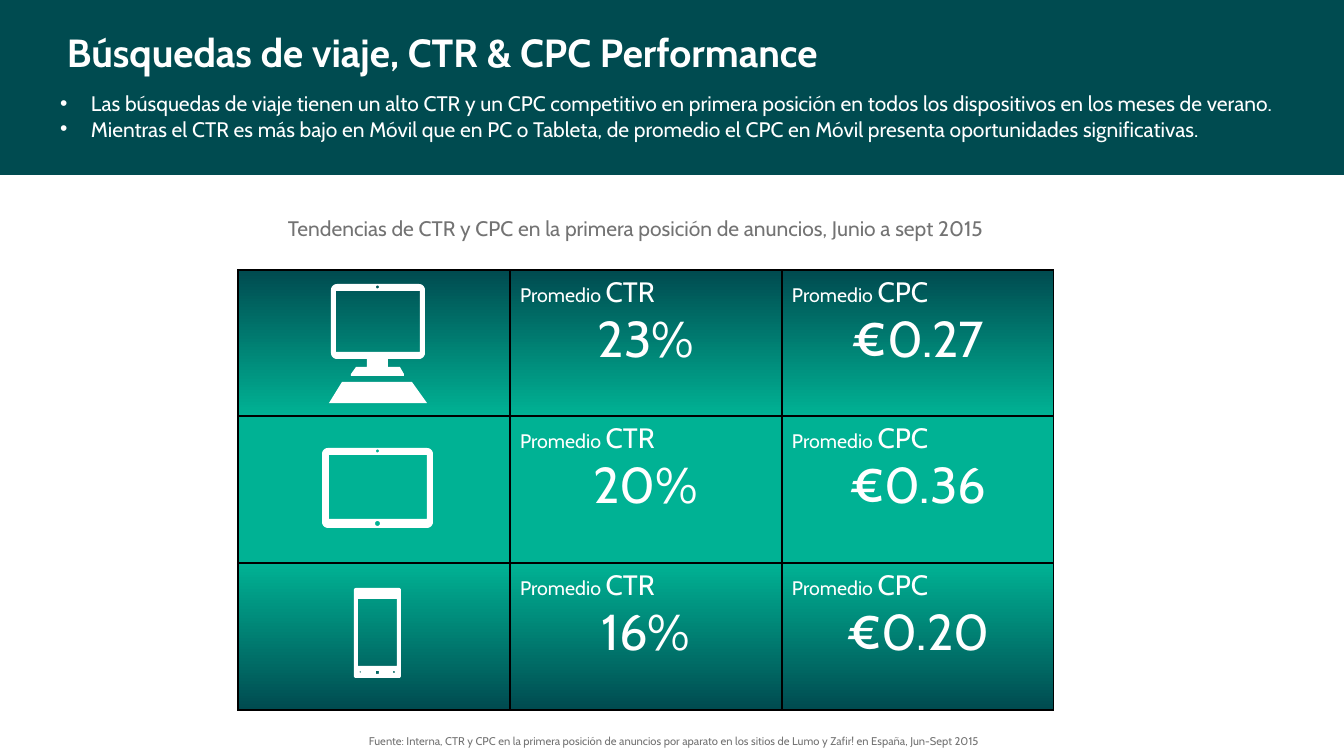
from dataclasses import dataclass
from math import cos, radians, sin

from lxml.etree import SubElement
from pptx import Presentation
from pptx.dml.color import RGBColor
from pptx.enum.shapes import MSO_SHAPE
from pptx.enum.text import MSO_ANCHOR, MSO_AUTO_SIZE, PP_ALIGN
from pptx.oxml.ns import qn
from pptx.util import Emu, Pt

PX = 914400 / 100.8


@dataclass(frozen=True)
class Theme:
    font: str = "Cabin"
    dark: RGBColor = RGBColor(0x00, 0x4B, 0x50)
    green: RGBColor = RGBColor(0x00, 0xB2, 0x94)
    white: RGBColor = RGBColor(0xFF, 0xFF, 0xFF)
    grey: RGBColor = RGBColor(0x73, 0x73, 0x73)
    title: int = 28
    body: int = 15
    source: int = 8
    prefix: int = 14
    metric: int = 20
    value: int = 36


THEME = Theme()

TITLE = "Búsquedas de viaje, CTR & CPC Performance"
FINDINGS = [
    "Las búsquedas de viaje tienen un alto CTR y un CPC competitivo en primera "
    "posición en todos los dispositivos en los meses de verano.",
    "Mientras el CTR es más bajo en Móvil que en PC o Tableta, de promedio el CPC "
    "en Móvil presenta oportunidades significativas.",
]
CAPTION = "Tendencias de CTR y CPC en la primera posición de anuncios, Junio a sept 2015"
SOURCE = ("Fuente: Interna, CTR y CPC en la primera posición de anuncios por aparato "
          "en los sitios de Lumo y Zafir! en España, Jun-Sept 2015")
METRICS = ["CTR", "CPC"]
# One row per device: top colour, bottom colour, values
DEVICES = [
    (THEME.dark, THEME.green, ["23%", "€0.27"]),
    (THEME.green, THEME.green, ["20%", "€0.36"]),
    (THEME.green, THEME.dark, ["16%", "€0.20"]),
]
COLUMN_WIDTH = 272
ROW_HEIGHTS = [146, 147, 147]


def px(value):
    return Emu(round(value * PX))


def add_run(paragraph, text, size, color, bold=False):
    run = paragraph.add_run()
    run.text = text
    run.font.name = THEME.font
    run.font.size = Pt(size)
    run.font.bold = bold
    run.font.color.rgb = color


def place(shape, left, top, width, height, anchor=MSO_ANCHOR.TOP):
    shape.left, shape.top = px(left), px(top)
    shape.width, shape.height = px(width), px(height)
    frame = shape.text_frame
    frame.word_wrap = True
    frame.auto_size = MSO_AUTO_SIZE.NONE
    frame.vertical_anchor = anchor
    frame.margin_left = frame.margin_right = frame.margin_top = frame.margin_bottom = 0
    return frame


def add_text(slide, box, text, size, anchor=MSO_ANCHOR.TOP):
    frame = place(slide.shapes.add_textbox(0, 0, 0, 0), *box, anchor)
    add_run(frame.paragraphs[0], text, size, THEME.grey)
    return frame.paragraphs[0]


def add_header(slide):
    title, findings = slide.shapes.title, slide.placeholders[1]
    band = slide.shapes.add_shape(MSO_SHAPE.RECTANGLE, 0, 0, px(1344), px(175))
    band.shadow.inherit = False
    band.fill.solid()
    band.fill.fore_color.rgb = THEME.dark
    band.line.fill.background()
    title._element.addprevious(band._element)  # band lies behind the text

    heading = place(title, 67, 28, 1091, 57).paragraphs[0]
    heading.alignment = PP_ALIGN.LEFT
    add_run(heading, TITLE, THEME.title, THEME.white, bold=True)

    frame = place(findings, 60, 91, 1248, 84)
    for index, finding in enumerate(FINDINGS):
        paragraph = frame.add_paragraph() if index else frame.paragraphs[0]
        paragraph.space_before = Pt(0)
        properties = paragraph._p.get_or_add_pPr()
        properties.set("marL", str(px(31)))
        properties.set("indent", str(-px(31)))
        SubElement(properties, qn("a:buFont"), typeface="Arial")
        SubElement(properties, qn("a:buChar"), char="•")
        add_run(paragraph, finding, THEME.body, THEME.white)


def style_cell(cell, top_color, bottom_color):
    properties = cell._tc.get_or_add_tcPr()
    for side in ("a:lnL", "a:lnR", "a:lnT", "a:lnB"):
        border = SubElement(properties, qn(side), w=str(Pt(1)))
        SubElement(SubElement(border, qn("a:solidFill")), qn("a:srgbClr"), val="000000")
    if top_color == bottom_color:
        cell.fill.solid()
        cell.fill.fore_color.rgb = top_color
    else:
        cell.fill.gradient()
        cell.fill.gradient_angle = 270
        for stop, color in zip(cell.fill.gradient_stops, (top_color, bottom_color)):
            stop.color.rgb = color


def add_metrics_table(slide):
    columns = len(METRICS) + 1
    table = slide.shapes.add_table(
        len(DEVICES), columns, px(238), px(270),
        px(COLUMN_WIDTH * columns), px(sum(ROW_HEIGHTS))).table
    table.first_row = table.horz_banding = False
    for column in table.columns:
        column.width = px(COLUMN_WIDTH)
    for row, height, (top_color, bottom_color, values) in zip(
            table.rows, ROW_HEIGHTS, DEVICES):
        row.height = px(height)
        for cell in row.cells:
            style_cell(cell, top_color, bottom_color)
        for cell, metric, value in zip(list(row.cells)[1:], METRICS, values):
            label = cell.text_frame.paragraphs[0]
            add_run(label, "Promedio ", THEME.prefix, THEME.white)
            add_run(label, metric, THEME.metric, THEME.white)
            amount = cell.text_frame.add_paragraph()
            amount.alignment = PP_ALIGN.CENTER
            add_run(amount, value, THEME.value, THEME.white)


def rect(left, top, right, bottom):
    return [(left, top), (right, top), (right, bottom), (left, bottom)]


def arc(x, y, radius, start, end):
    return [(x + radius * cos(radians(a)), y + radius * sin(radians(a)))
            for a in range(start, end + 1, 15)]


def circle(x, y, radius):
    return arc(x, y, radius, 0, 345)


def rounded(left, top, right, bottom, r):
    corners = rect(left + r, top + r, right - r, bottom - r)
    return [point for (x, y), start in zip(corners, (180, 270, 360, 450))
            for point in arc(x, y, r, start, start + 90)]


def add_icon(slide, *outlines):
    """Outlines inside another outline become holes."""
    builder = None
    for outline in outlines:
        start, *others = [(px(x), px(y)) for x, y in outline]
        if builder is None:
            builder = slide.shapes.build_freeform(*start)
        else:
            builder.move_to(*start)
        builder.add_line_segments(others, close=True)
    icon = builder.convert_to_shape()
    icon.shadow.inherit = False
    icon.fill.solid()
    icon.fill.fore_color.rgb = THEME.white
    icon.line.fill.background()


def add_device_icons(slide):
    # Desktop: monitor, screen, camera, neck with foot, keyboard
    add_icon(slide, rounded(331, 284, 425, 359, 6), rect(336, 291, 420, 352),
             circle(377.5, 287, 1.5),
             [(367, 359), (388, 359), (388, 367), (400, 367), (404, 374),
              (404, 376), (351, 376), (351, 374), (356, 367), (367, 367)],
             [(342, 382), (412, 382), (427, 403), (329, 403)])
    # Tablet: body, screen, camera, button
    add_icon(slide, rounded(322, 448, 433, 528, 6), rect(329, 455, 427, 519),
             circle(377.5, 451, 1.5), circle(377.5, 523.5, 2.5))
    # Phone: body, screen, back, home and search keys
    add_icon(slide, rounded(354, 588, 401, 678, 2), rect(358, 599, 397, 666),
             [(359, 672), (361, 671), (361, 673)], rect(376, 671, 379, 674),
             circle(394, 672, 1))


def main():
    prs = Presentation()
    prs.slide_width, prs.slide_height = px(1344), px(756)
    slide = prs.slides.add_slide(prs.slide_layouts[1])
    add_header(slide)
    add_metrics_table(slide)
    add_device_icons(slide)
    # Caption above the table and source below it
    add_text(slide, (288, 216, 716, 47), CAPTION, THEME.body)
    source = add_text(slide, (369, 724, 901, 24), SOURCE, THEME.source, MSO_ANCHOR.BOTTOM)
    source.line_spacing = 0.9
    prs.save("out.pptx")


if __name__ == "__main__":
    main()
